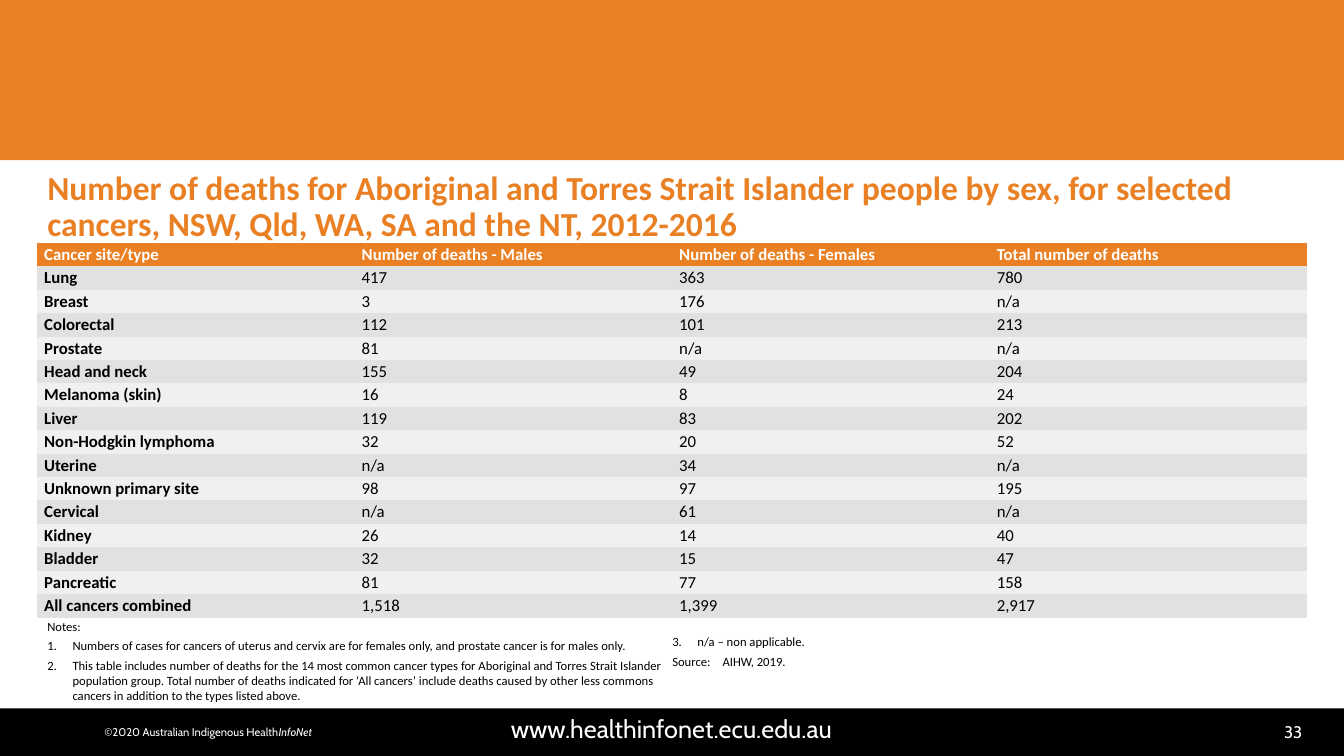
from lxml.etree import SubElement
from pptx import Presentation
from pptx.dml.color import RGBColor
from pptx.enum.shapes import MSO_SHAPE
from pptx.enum.text import MSO_ANCHOR, MSO_AUTO_SIZE, PP_ALIGN
from pptx.oxml.ns import qn
from pptx.util import Pt

ORANGE, BLACK, WHITE = "EA8024", "000000", "FFFFFF"
BANDS = ["F0F0F0", "E1E1E1"]
NO_STYLE = "{2D5ABB26-0587-4C30-8999-92F81FD0307C}"


def paint(color_format, color):
    color_format.rgb = RGBColor.from_string(color)


def add_run(paragraph, text, size, color, font="Calibri", bold=False, italic=False):
    run = paragraph.add_run()
    run.text = text
    run.font.size = Pt(size)
    run.font.name = font
    run.font.bold = bold
    run.font.italic = italic
    paint(run.font.color, color)


presentation = Presentation()
presentation.slide_width, presentation.slide_height = Pt(960), Pt(540)
slide = presentation.slides.add_slide(presentation.slide_layouts[1])

for left, top, width, height, color in [
    (-2, 0, 962, 114.5, ORANGE),
    (0, 506, 960, 34, BLACK),
]:
    band = slide.shapes.add_shape(
        MSO_SHAPE.RECTANGLE, Pt(left), Pt(top), Pt(width), Pt(height)
    )
    band.shadow.inherit = False
    band.fill.solid()
    paint(band.fill.fore_color, color)
    band.line.fill.background()

footers = [
    (860.4, 512, 77, 21.6, PP_ALIGN.RIGHT, 12, True, [("33", False)]),
    (44.6, 506, 870, 28, PP_ALIGN.CENTER, 18, True, [("www.healthinfonet.ecu.edu.au", False)]),
    (66.2, 514, 165, 17.3, PP_ALIGN.CENTER, 8, False,
     [("©2020 Australian Indigenous Health", False), ("InfoNet", True)]),
]
for left, top, width, height, alignment, size, wraps, pieces in footers:
    footer = slide.shapes.add_textbox(Pt(left), Pt(top), Pt(width), Pt(height)).text_frame
    footer.word_wrap = wraps
    footer.vertical_anchor = MSO_ANCHOR.MIDDLE
    footer.paragraphs[0].alignment = alignment
    for text, italic in pieces:
        add_run(footer.paragraphs[0], text, size, WHITE, "Cabin", italic=italic)

title = slide.shapes.title
title.left, title.top, title.width, title.height = Pt(26.6), Pt(118.8), Pt(907.2), Pt(60.5)
title.text_frame.auto_size = MSO_AUTO_SIZE.NONE
title.text_frame.vertical_anchor = MSO_ANCHOR.TOP
heading = title.text_frame.paragraphs[0]
heading.alignment = PP_ALIGN.LEFT
heading.line_spacing = 0.9
add_run(
    heading,
    "Number of deaths for Aboriginal and Torres Strait Islander people by sex, "
    "for selected cancers, NSW, Qld, WA, SA and the NT, 2012-2016",
    24, ORANGE, bold=True,
)

deaths = [
    ("Cancer site/type", "Number of deaths - Males", "Number of deaths - Females",
     "Total number of deaths"),
    ("Lung", "417", "363", "780"),
    ("Breast", "3", "176", "n/a"),
    ("Colorectal", "112", "101", "213"),
    ("Prostate", "81", "n/a", "n/a"),
    ("Head and neck", "155", "49", "204"),
    ("Melanoma (skin)", "16", "8", "24"),
    ("Liver", "119", "83", "202"),
    ("Non-Hodgkin lymphoma", "32", "20", "52"),
    ("Uterine", "n/a", "34", "n/a"),
    ("Unknown primary site", "98", "97", "195"),
    ("Cervical", "n/a", "61", "n/a"),
    ("Kidney", "26", "14", "40"),
    ("Bladder", "32", "15", "47"),
    ("Pancreatic", "81", "77", "158"),
    ("All cancers combined", "1,518", "1,399", "2,917"),
]
death_table = slide.shapes.add_table(
    len(deaths), 4, Pt(26.6), Pt(173.5), Pt(907.2), Pt(267.84)
).table
death_table._tbl.tblPr.find(qn("a:tableStyleId")).text = NO_STYLE
for row, entries in enumerate(deaths):
    death_table.rows[row].height = Pt(16.74)
    for column, entry in enumerate(entries):
        cell = death_table.cell(row, column)
        cell.margin_left = cell.margin_right = Pt(5)
        cell.margin_top = cell.margin_bottom = Pt(0)
        cell.vertical_anchor = MSO_ANCHOR.MIDDLE
        cell.fill.solid()
        paint(cell.fill.fore_color, BANDS[row % 2] if row else ORANGE)
        line = cell.text_frame.paragraphs[0]
        line.line_spacing = Pt(14.7)
        add_run(line, entry, 12, BLACK if row else WHITE, bold=row == 0 or column == 0)

notes = slide.placeholders[1]
notes.left, notes.top, notes.width, notes.height = Pt(26.6), Pt(438.5), Pt(907.2), Pt(75.6)
notes.text_frame.auto_size = MSO_AUTO_SIZE.NONE
notes.text_frame.vertical_anchor = MSO_ANCHOR.TOP
notes.text_frame._txBody.bodyPr.set("numCol", "2")
note_lines = [
    ("Notes:", False, 3),
    ("Numbers of cases for cancers of uterus and cervix are for females only, "
     "and prostate cancer is for males only.", True, 3),
    ("This table includes number of deaths for the 14 most common cancer types for "
     "Aboriginal and Torres Strait Islander population group. Total number of deaths "
     "indicated for ‘All cancers’ include deaths caused by other less commons cancers "
     "in addition to the types listed above.\n", True, 0),
    ("n/a – non applicable.", True, 3),
    ("Source: \tAIHW, 2019.", False, 3),
]
for index, (text, numbered, gap) in enumerate(note_lines):
    note = notes.text_frame.add_paragraph() if index else notes.text_frame.paragraphs[0]
    note.space_before, note.space_after = Pt(0), Pt(gap)
    properties = note._p.get_or_add_pPr()
    properties.set("marL", str(Pt(18) if numbered else 0))
    properties.set("indent", str(Pt(-18) if numbered else 0))
    if numbered:
        SubElement(properties, qn("a:buFont"), typeface="+mj-lt")
        SubElement(properties, qn("a:buAutoNum"), type="arabicPeriod")
    else:
        SubElement(properties, qn("a:buNone"))
    tabs = SubElement(properties, qn("a:tabLst"))
    for stop in (36, 46.8):
        SubElement(tabs, qn("a:tab"), pos=str(Pt(stop)), algn="l")
    add_run(note, text.rstrip("\n"), 9, BLACK)
    if text.endswith("\n"):
        note.add_line_break()
        note.font.size = Pt(9)
        SubElement(note._p, qn("a:endParaRPr"), sz="900")

presentation.save("out.pptx")
